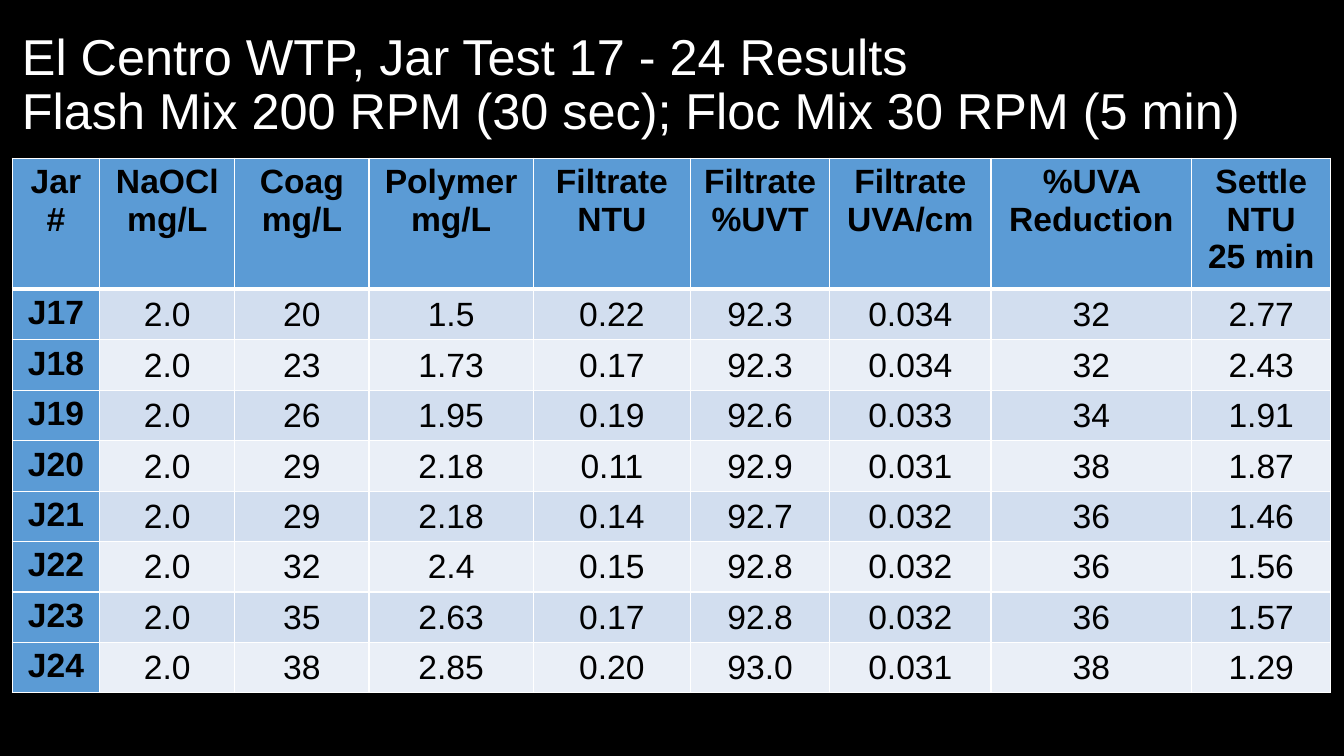
"""Build the jar test results slide."""
import pptx
import pptx.util
import pptx.dml.color
import pptx.enum.text
import pptx.oxml
import pptx.oxml.ns

TITLE = ["El Centro WTP, Jar Test 17 - 24 Results",
         "Flash Mix 200 RPM (30 sec); Floc Mix 30 RPM (5 min)"]
HEADS = [["Jar#"], ["NaOCl", "mg/L"], ["Coag", "mg/L"], ["Polymer", "mg/L"],
         ["Filtrate", "NTU"], ["Filtrate", "%UVT"], ["Filtrate", "UVA/cm"],
         ["%UVA Reduction"], ["Settle", "NTU", "25 min"]]
JARS = [
    ("J17", "2.0", "20", "1.5", "0.22", "92.3", "0.034", "32", "2.77"),
    ("J18", "2.0", "23", "1.73", "0.17", "92.3", "0.034", "32", "2.43"),
    ("J19", "2.0", "26", "1.95", "0.19", "92.6", "0.033", "34", "1.91"),
    ("J20", "2.0", "29", "2.18", "0.11", "92.9", "0.031", "38", "1.87"),
    ("J21", "2.0", "29", "2.18", "0.14", "92.7", "0.032", "36", "1.46"),
    ("J22", "2.0", "32", "2.4", "0.15", "92.8", "0.032", "36", "1.56"),
    ("J23", "2.0", "35", "2.63", "0.17", "92.8", "0.032", "36", "1.57"),
    ("J24", "2.0", "38", "2.85", "0.20", "93.0", "0.031", "38", "1.29"),
]
COLS = [0.87, 1.34, 1.33, 1.63, 1.56, 1.38, 1.6, 1.99, 1.38]
ROW_H, GRID_H = 0.41, 5.3
LEFT, TOP = 0.12, 1.57
FONT = "Arial"
HUES = {"back": "000000", "title": "FFFFFF", "text": "000000", "line": "FFFFFF",
        "head": "5B9BD5", "odd": "D2DEEF", "even": "EAEFF7"}

Inches, Pt = pptx.util.Inches, pptx.util.Pt
ANCHOR = pptx.enum.text.MSO_ANCHOR
CENTER = pptx.enum.text.PP_ALIGN.CENTER


def paint(fill, hue):
    fill.solid()
    fill.fore_color.rgb = pptx.dml.color.RGBColor.from_string(HUES[hue])


def write(para, text, size, hue, bold=False):
    run = para.add_run()
    run.text = text
    font = run.font
    font.name, font.size, font.bold = FONT, Pt(size), bold
    paint(font.fill, hue)


def edge(cell, side, width):
    space = pptx.oxml.ns.nsdecls("a")
    cell._tc.get_or_add_tcPr().append(pptx.oxml.parse_xml(
        f'<a:{side} {space} w="{Pt(width)}"><a:solidFill>'
        f'<a:srgbClr val="{HUES["line"]}"/></a:solidFill></a:{side}>'))


def fill_cell(cell, lines, row, col):
    label = row == 0 or col == 0
    widths = {"lnL": 1, "lnR": 1, "lnT": 3 if row == 1 else 1,
              "lnB": 3 if row == 0 else 1}
    for side, width in widths.items():
        edge(cell, side, width)
    paint(cell.fill, "head" if label else "odd" if row % 2 else "even")
    if not label:
        cell.vertical_anchor = ANCHOR.MIDDLE
        cell.margin_left = cell.margin_right = cell.margin_top = Inches(0.01)
        cell.margin_bottom = 0
    frame = cell.text_frame
    for i, line in enumerate(lines):
        para = frame.add_paragraph() if i else frame.paragraphs[0]
        para.alignment = CENTER
        write(para, line, 24, "text", label)


def add_title(slide):
    box = slide.shapes.add_textbox(Inches(LEFT), Inches(0.13), Inches(13.03), Inches(1.45))
    frame = box.text_frame
    frame.word_wrap = True
    frame.vertical_anchor = ANCHOR.MIDDLE
    para = frame.paragraphs[0]
    para.line_spacing = 0.9
    for i, line in enumerate(TITLE):
        if i:
            para.add_line_break()
        write(para, line, 36, "title")


def add_grid(slide):
    rows = [HEADS] + [[[text] for text in jar] for jar in JARS]
    grid = slide.shapes.add_table(len(rows), len(COLS), Inches(LEFT), Inches(TOP),
                                  Inches(sum(COLS)), Inches(GRID_H))
    table = grid.table
    for col, width in enumerate(COLS):
        table.columns[col].width = Inches(width)
    for r, row in enumerate(rows):
        table.rows[r].height = Inches(ROW_H)
        for c, lines in enumerate(row):
            fill_cell(table.cell(r, c), lines, r, c)
    grid.height = Inches(GRID_H)


def main():
    deck = pptx.Presentation()
    deck.slide_width, deck.slide_height = Inches(13.33), Inches(7.5)
    slide = deck.slides.add_slide(deck.slide_layouts[6])
    paint(slide.background.fill, "back")
    add_title(slide)
    add_grid(slide)
    deck.save("out.pptx")


if __name__ == "__main__":
    main()
